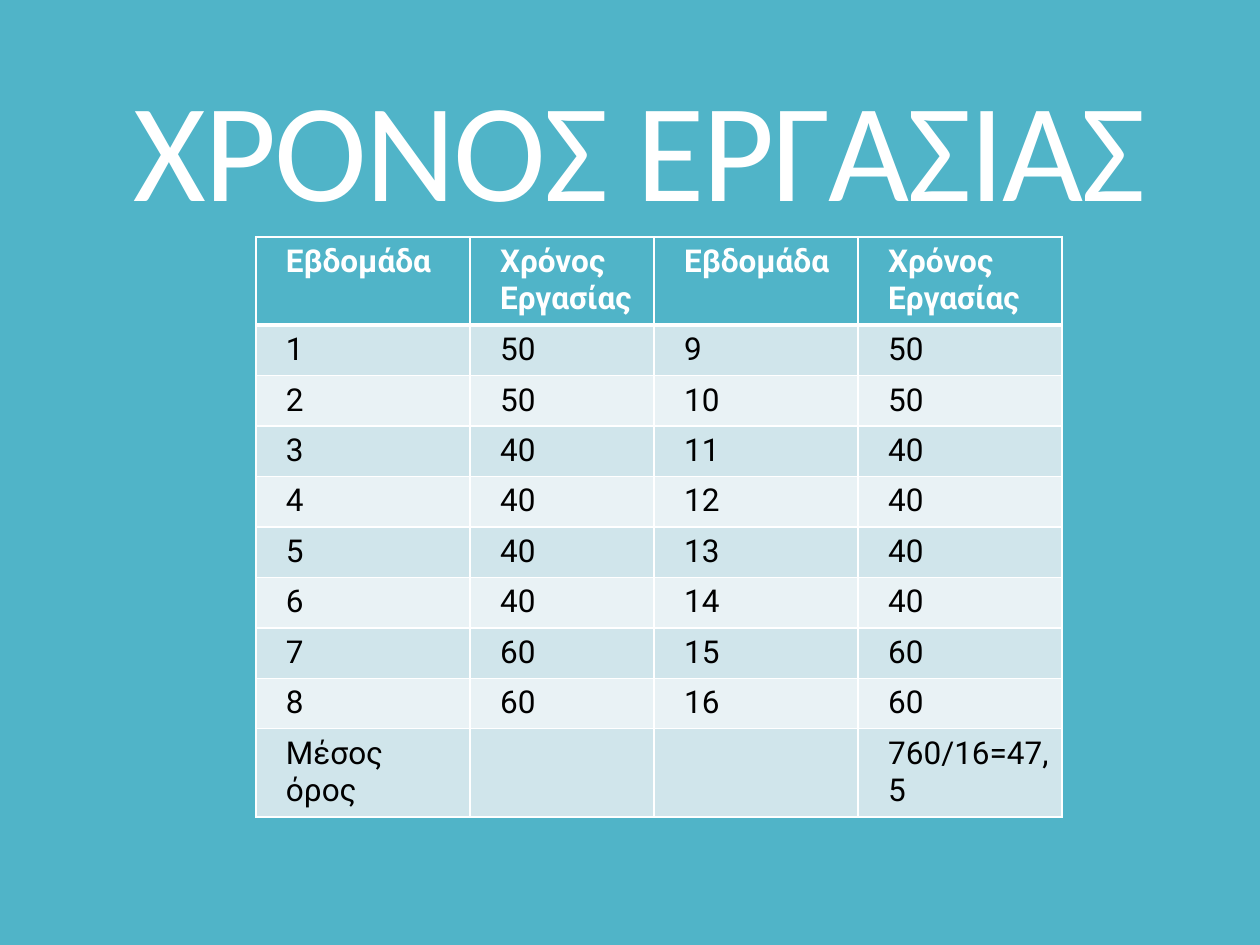
from lxml.etree import SubElement
from pptx import Presentation
from pptx.dml.color import RGBColor
from pptx.enum.text import MSO_ANCHOR, PP_ALIGN
from pptx.oxml.ns import qn
from pptx.util import Inches, Pt

COLORS = {
    "teal": "50B4C8",
    "white": "FFFFFF",
    "black": "000000",
    "band_dark": "D0E5EB",
    "band_light": "E9F2F5",
}
HEADINGS = ["Εβδομάδα", "Χρόνος Εργασίας"] * 2
HOURS = [50, 50, 40, 40, 40, 40, 60, 60]
COLUMN_WIDTHS = [1.7, 1.46, 1.62, 1.62]
HEADER_HEIGHT, ROW_HEIGHT = 0.67, 0.39


def rgb(name):
    return RGBColor.from_string(COLORS[name])


class WorkTimeSlide:
    title_font = "Calibri"
    table_font = "Roboto"

    def __init__(self, presentation):
        self.slide = presentation.slides.add_slide(presentation.slide_layouts[6])
        self.slide.background.fill.solid()
        self.slide.background.fill.fore_color.rgb = rgb("teal")

    def run(self, paragraph, text, font, size, color, bold=False):
        run = paragraph.add_run()
        run.text = text
        run.font.name = font
        run.font.size = Pt(size)
        run.font.bold = bold
        run.font.color.rgb = rgb(color)
        return run

    def title(self, text, left, top, width, height):
        heading = self.slide.shapes.add_textbox(
            Inches(left), Inches(top), Inches(width), Inches(height)
        )
        frame = heading.text_frame
        frame.word_wrap = True
        frame.vertical_anchor = MSO_ANCHOR.BOTTOM
        paragraph = frame.paragraphs[0]
        paragraph.alignment = PP_ALIGN.CENTER
        paragraph.line_spacing = 0.8
        run = self.run(paragraph, text, self.title_font, 80, "white")
        run.font._element.set("spc", "-120")

    def borders(self, cell, top, bottom):
        properties = cell._tc.get_or_add_tcPr()
        for side, points in {"L": 1, "R": 1, "T": top, "B": bottom}.items():
            line = SubElement(properties, qn(f"a:ln{side}"), w=str(Pt(points)))
            fill = SubElement(line, qn("a:solidFill"))
            SubElement(fill, qn("a:srgbClr"), val=COLORS["white"])

    def cell(self, cell, text, row):
        header = row == 0
        cell.margin_left, cell.margin_right = Inches(0.24), Inches(0.1)
        cell.margin_top = cell.margin_bottom = Inches(0.05)
        self.borders(cell, top=3 if row == 1 else 1, bottom=3 if header else 1)
        band = "band_dark" if row % 2 else "band_light"
        cell.fill.solid()
        cell.fill.fore_color.rgb = rgb("teal" if header else band)
        if text:
            color = "white" if header else "black"
            paragraph = cell.text_frame.paragraphs[0]
            self.run(paragraph, text, self.table_font, 18, color, header)

    def table(self, rows, left, top):
        heights = [HEADER_HEIGHT] + [ROW_HEIGHT] * (len(rows) - 1)
        schedule = self.slide.shapes.add_table(
            len(rows), len(COLUMN_WIDTHS), Inches(left), Inches(top),
            Inches(sum(COLUMN_WIDTHS)), Inches(sum(heights)),
        ).table
        for column, width in zip(schedule.columns, COLUMN_WIDTHS):
            column.width = Inches(width)
        for r, (height, texts) in enumerate(zip(heights, rows)):
            schedule.rows[r].height = Inches(height)
            for c, text in enumerate(texts):
                self.cell(schedule.cell(r, c), text, r)


def main():
    presentation = Presentation()
    presentation.slide_width, presentation.slide_height = Inches(10), Inches(7.5)
    weeks = [
        [str(week), str(hours), str(week + len(HOURS)), str(hours)]
        for week, hours in enumerate(HOURS, 1)
    ]
    average = ["Μέσος όρος", "", "", "760/16=47,5"]
    work_time = WorkTimeSlide(presentation)
    work_time.title("ΧΡΟΝΟΣ ΕΡΓΑΣΙΑΣ", 0.83, 0.44, 8.5, 1.42)
    work_time.table([HEADINGS, *weeks, average], 2.03, 1.88)
    presentation.save("out.pptx")


if __name__ == "__main__":
    main()
